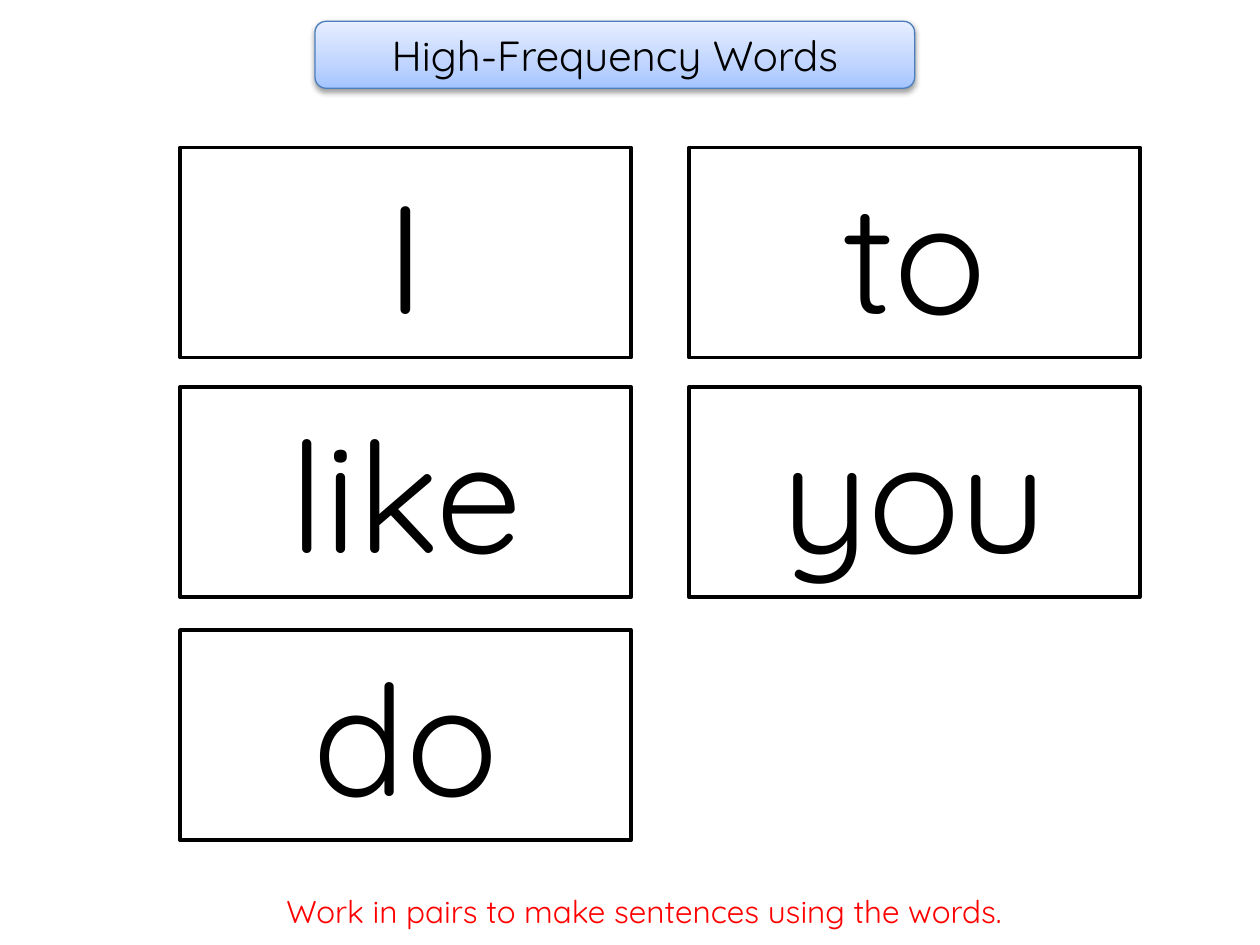
from lxml.etree import SubElement
from pptx import Presentation
from pptx.dml.color import RGBColor
from pptx.enum.shapes import MSO_SHAPE as Shape
from pptx.enum.text import MSO_ANCHOR as Anchor, MSO_AUTO_SIZE as AutoSize, PP_ALIGN as Align
from pptx.oxml import parse_xml
from pptx.oxml.ns import nsdecls, qn
from pptx.util import Cm, Pt

BLACK = RGBColor(0x00, 0x00, 0x00)
WHITE = RGBColor(0xFF, 0xFF, 0xFF)
RED = RGBColor(0xFF, 0x00, 0x00)
BORDER_BLUE = RGBColor(0x4B, 0x7E, 0xBC)
TITLE_STOPS = [
    (0, RGBColor(0xA4, 0xC4, 0xFF)),
    (35, RGBColor(0xBF, 0xD4, 0xFF)),
    (100, RGBColor(0xE6, 0xEE, 0xFF)),
]
FONT = "Quicksand"


def write_text(box, text, size, color):
    frame = box.text_frame
    frame.word_wrap = True
    frame.text = text
    para = frame.paragraphs[0]
    para.alignment = Align.CENTER
    span = para.runs[0]
    span.font.name = FONT
    span.font.size = Pt(size)
    span.font.color.rgb = color


def add_panel(kind, left, top, width, height, line_color, line_width):
    panel = page.shapes.add_shape(kind, Cm(left), Cm(top), Cm(width), Cm(height))
    panel.shadow.inherit = False
    panel.line.color.rgb = line_color
    panel.line.width = Pt(line_width)
    panel.text_frame.vertical_anchor = Anchor.MIDDLE
    return panel


deck = Presentation()
deck.slide_width = Cm(25.4)
deck.slide_height = Cm(19.05)
page = deck.slides.add_slide(deck.slide_layouts[6])

title = add_panel(Shape.ROUNDED_RECTANGLE, 6.35, 0.43, 12.09, 1.35, BORDER_BLUE, 0.75)
title.fill.gradient()
title.fill.gradient_angle = 90
properties = title.element.spPr
stop_list = properties.find(".//" + qn("a:gsLst"))
for stop in list(stop_list):
    stop_list.remove(stop)
for position, color in TITLE_STOPS:
    stop = SubElement(stop_list, qn("a:gs"), pos=str(position * 1000))
    SubElement(stop, qn("a:srgbClr"), val=str(color))
properties.find(qn("a:effectLst")).append(parse_xml(
    f'<a:outerShdw {nsdecls("a")} blurRad="{Pt(3.1)}" dist="{Pt(1.6)}" dir="5400000" rotWithShape="0">'
    '<a:srgbClr val="000000"><a:alpha val="38000"/></a:srgbClr></a:outerShdw>'
))
write_text(title, "High-Frequency Words", 24, BLACK)

word_rows = [(2.97, ["I", "to"]), (7.8, ["like", "you"]), (12.7, ["do"])]
for top, words in word_rows:
    for column, word in enumerate(words):
        card = add_panel(Shape.RECTANGLE, 3.63 + column * 10.26, top, 9.09, 4.24, BLACK, 2)
        card.fill.solid()
        card.fill.fore_color.rgb = WHITE
        write_text(card, word, 88, BLACK)

task = page.shapes.add_textbox(Cm(2.57), Cm(17.86), Cm(20.83), Cm(1.02))
write_text(task, "Work in pairs to make sentences using the words.", 18, RED)
task.text_frame.auto_size = AutoSize.SHAPE_TO_FIT_TEXT

deck.save("out.pptx")
